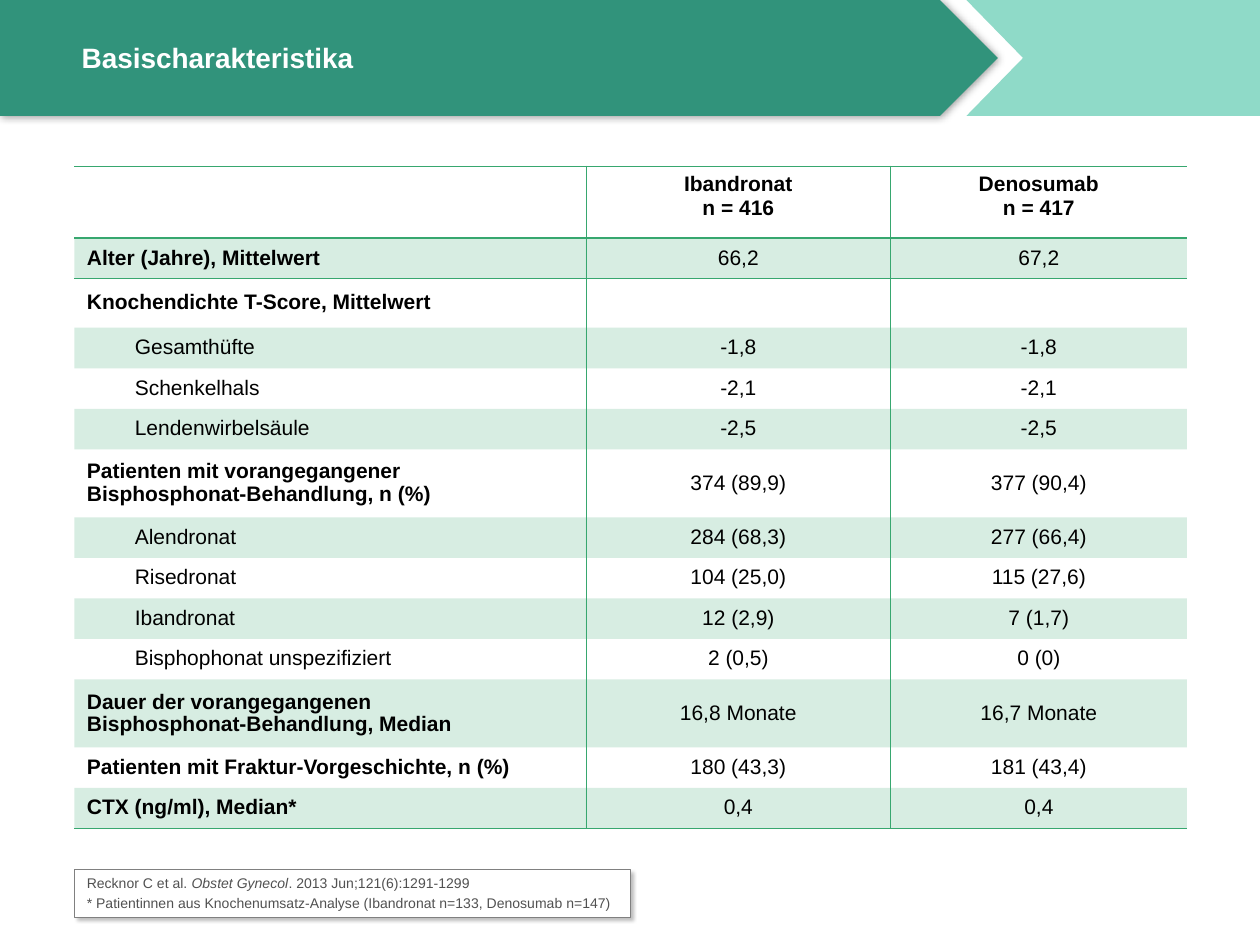
from lxml import etree
from pptx import Presentation
from pptx.dml.color import RGBColor
from pptx.enum.shapes import MSO_SHAPE
from pptx.enum.text import MSO_ANCHOR, PP_ALIGN
from pptx.oxml.ns import qn
from pptx.util import Inches, Pt

PENTAGON = MSO_SHAPE.PENTAGON
RECTANGLE = MSO_SHAPE.RECTANGLE
LEFT, CENTER = PP_ALIGN.LEFT, PP_ALIGN.CENTER
TOP, MIDDLE, BOTTOM = MSO_ANCHOR.TOP, MSO_ANCHOR.MIDDLE, MSO_ANCHOR.BOTTOM
NO_STYLE = "{2D5ABB26-0587-4C30-8999-92F81FD0307C}"

COLORS = {
    "banner": "31937B",
    "accent": "8FDAC8",
    "grid": "37A76F",
    "white": "FFFFFF",
    "black": "000000",
    "border": "808080",
    "note": "515151",
}

HEADER = ["", "Ibandronat\nn = 416", "Denosumab\nn = 417"]
GROUP, ITEM = 0, 1
ROWS = [
    (GROUP, "Alter (Jahre), Mittelwert", "66,2", "67,2"),
    (GROUP, "Knochendichte T-Score, Mittelwert", "", ""),
    (ITEM, "Gesamthüfte", "-1,8", "-1,8"),
    (ITEM, "Schenkelhals", "-2,1", "-2,1"),
    (ITEM, "Lendenwirbelsäule", "-2,5", "-2,5"),
    (GROUP, "Patienten mit vorangegangener\nBisphosphonat-Behandlung, n (%)", "374 (89,9)", "377 (90,4)"),
    (ITEM, "Alendronat", "284 (68,3)", "277 (66,4)"),
    (ITEM, "Risedronat", "104 (25,0)", "115 (27,6)"),
    (ITEM, "Ibandronat", "12 (2,9)", "7 (1,7)"),
    (ITEM, "Bisphophonat unspezifiziert", "2 (0,5)", "0 (0)"),
    (GROUP, "Dauer der vorangegangenen\nBisphosphonat-Behandlung, Median", "16,8 Monate", "16,7 Monate"),
    (GROUP, "Patienten mit Fraktur-Vorgeschichte, n (%)", "180 (43,3)", "181 (43,4)"),
    (GROUP, "CTX (ng/ml), Median*", "0,4", "0,4"),
]
COLUMN_WIDTHS = [4.06, 2.42, 2.35]
TABLE_HEIGHT = 5.26
SPECIAL_HEIGHTS = {0: 0.57, 2: 0.39, 6: 0.54, 11: 0.54}
FOOTNOTE = [
    [("Recknor C et al. ", False), ("Obstet Gynecol", True), (". 2013 Jun;121(6):1291-1299", False)],
    [("* Patientinnen aus Knochenumsatz-Analyse (Ibandronat n=133, Denosumab n=147)", False)],
]


class SlideBuilder:
    font_name = "Arial"

    def __init__(self, slide):
        self.slide = slide

    def color(self, name):
        return RGBColor.from_string(COLORS[name])

    def fill(self, target, name):
        target.fill.solid()
        target.fill.fore_color.rgb = self.color(name)

    def style(self, paragraph, size, color, bold=False, align=LEFT, spacing=1.0):
        paragraph.alignment = align
        paragraph.line_spacing = spacing
        font = paragraph.font
        font.name, font.size, font.bold = self.font_name, Pt(size), bold
        font.color.rgb = self.color(color)

    def color_xml(self, parent, name, alpha=100):
        color = etree.SubElement(parent, qn("a:srgbClr"), val=COLORS[name])
        if alpha < 100:
            etree.SubElement(color, qn("a:alpha"), val=str(alpha * 1000))

    def shadow(self, shape, alpha, blur, distance, angle):
        shape.shadow.inherit = False
        effects = shape._element.spPr.find(qn("a:effectLst"))
        outer = etree.SubElement(
            effects, qn("a:outerShdw"), blurRad=str(Pt(blur)),
            dist=str(Pt(distance)), dir=str(angle * 60000), rotWithShape="0")
        self.color_xml(outer, "black", alpha)

    def shape(self, kind, left, top, width, height, fill, shadow, line=None):
        shape = self.slide.shapes.add_shape(
            kind, Inches(left), Inches(top), Inches(width), Inches(height))
        self.fill(shape, fill)
        if line:
            shape.line.color.rgb = self.color(line)
            shape.line.width = Pt(0.25)
        else:
            shape.line.fill.background()
        self.shadow(shape, *shadow)
        return shape

    def outline(self, points, fill):
        corners = [(Inches(x), Inches(y)) for x, y in points]
        builder = self.slide.shapes.build_freeform(*corners[0], scale=1.0)
        builder.add_line_segments(corners[1:], close=True)
        shape = builder.convert_to_shape()
        self.fill(shape, fill)
        shape.line.fill.background()
        shape.shadow.inherit = False

    def title(self, text, left, top, width, height):
        box = self.slide.shapes.add_textbox(
            Inches(left), Inches(top), Inches(width), Inches(height))
        frame = box.text_frame
        frame.word_wrap = True
        frame.vertical_anchor = MIDDLE
        frame.text = text
        self.style(frame.paragraphs[0], 16, "white", bold=True)

    def footnote(self, lines, left, top, width, height):
        shape = self.shape(RECTANGLE, left, top, width, height, "white", (25, 2, 2, 45), "border")
        frame = shape.text_frame
        frame.word_wrap = True
        frame.vertical_anchor = BOTTOM
        for index, runs in enumerate(lines):
            paragraph = frame.add_paragraph() if index else frame.paragraphs[0]
            self.style(paragraph, 8, "note", spacing=0.9)
            paragraph.space_before = Pt(2.6)
            for text, italic in runs:
                run = paragraph.add_run()
                run.text = text
                run.font.italic = italic

    def borders(self, cell, widths):
        properties = cell._tc.get_or_add_tcPr()
        for side in ("L", "R", "T", "B"):
            if side in widths:
                line = etree.SubElement(properties, qn(f"a:ln{side}"), w=str(Pt(widths[side])))
                self.color_xml(etree.SubElement(line, qn("a:solidFill")), "grid")

    def cell(self, cell, text, bold, align, anchor, spacing, indent=0):
        cell.text = text
        cell.vertical_anchor = anchor
        cell.margin_left = cell.margin_right = Inches(0.1)
        cell.margin_top = cell.margin_bottom = Inches(0.05)
        for paragraph in cell.text_frame.paragraphs:
            self.style(paragraph, 12, "black", bold, align, spacing)
            if indent:
                paragraph._p.get_or_add_pPr().set("marL", str(Inches(indent)))

    def table(self, left, top):
        row_count, column_count = len(ROWS) + 1, len(COLUMN_WIDTHS)
        table = self.slide.shapes.add_table(
            row_count, column_count, Inches(left), Inches(top),
            Inches(sum(COLUMN_WIDTHS)), Inches(TABLE_HEIGHT)).table
        table.first_row = table.horz_banding = False
        table._tbl.tblPr.find(qn("a:tableStyleId")).text = NO_STYLE
        for column, width in zip(table.columns, COLUMN_WIDTHS):
            column.width = Inches(width)
        plain_height = (TABLE_HEIGHT - sum(SPECIAL_HEIGHTS.values())) / (row_count - len(SPECIAL_HEIGHTS))
        for index, row in enumerate(table.rows):
            row.height = Inches(SPECIAL_HEIGHTS.get(index, plain_height))
            level, *texts = ROWS[index - 1] if index else (GROUP, *HEADER)
            for position, text in enumerate(texts):
                cell = row.cells[position]
                is_label = position == 0
                self.cell(
                    cell, text,
                    bold=index == 0 or (is_label and level == GROUP),
                    align=LEFT if is_label else CENTER,
                    anchor=MIDDLE if index else TOP,
                    spacing=0.95 if index else 1.0,
                    indent=0.38 if is_label and level == ITEM else 0)
                widths = {}
                if position > 0:
                    widths["L"] = 0.5
                if position < column_count - 1:
                    widths["R"] = 0.5
                if index < 2:
                    widths["T"] = 1
                if index in (0, row_count - 1):
                    widths["B"] = 1
                self.borders(cell, widths)
                if index % 2:
                    fill = etree.SubElement(cell._tc.get_or_add_tcPr(), qn("a:solidFill"))
                    self.color_xml(fill, "grid", 20)
                else:
                    cell.fill.background()


def main():
    presentation = Presentation()
    presentation.slide_width, presentation.slide_height = Inches(10), Inches(7.5)
    builder = SlideBuilder(presentation.slides.add_slide(presentation.slide_layouts[6]))
    builder.outline([(7.67, 0), (10, 0), (10, 0.92), (7.67, 0.92), (8.12, 0.46)], "accent")
    builder.shape(PENTAGON, 0, 0, 7.92, 0.92, "banner", (40, 5, 0, 0))
    builder.title("Basischarakteristika", 0.55, 0.12, 6.7, 0.67)
    builder.table(0.59, 1.32)
    builder.footnote(FOOTNOTE, 0.59, 6.9, 4.41, 0.38)
    presentation.save("out.pptx")


if __name__ == "__main__":
    main()
